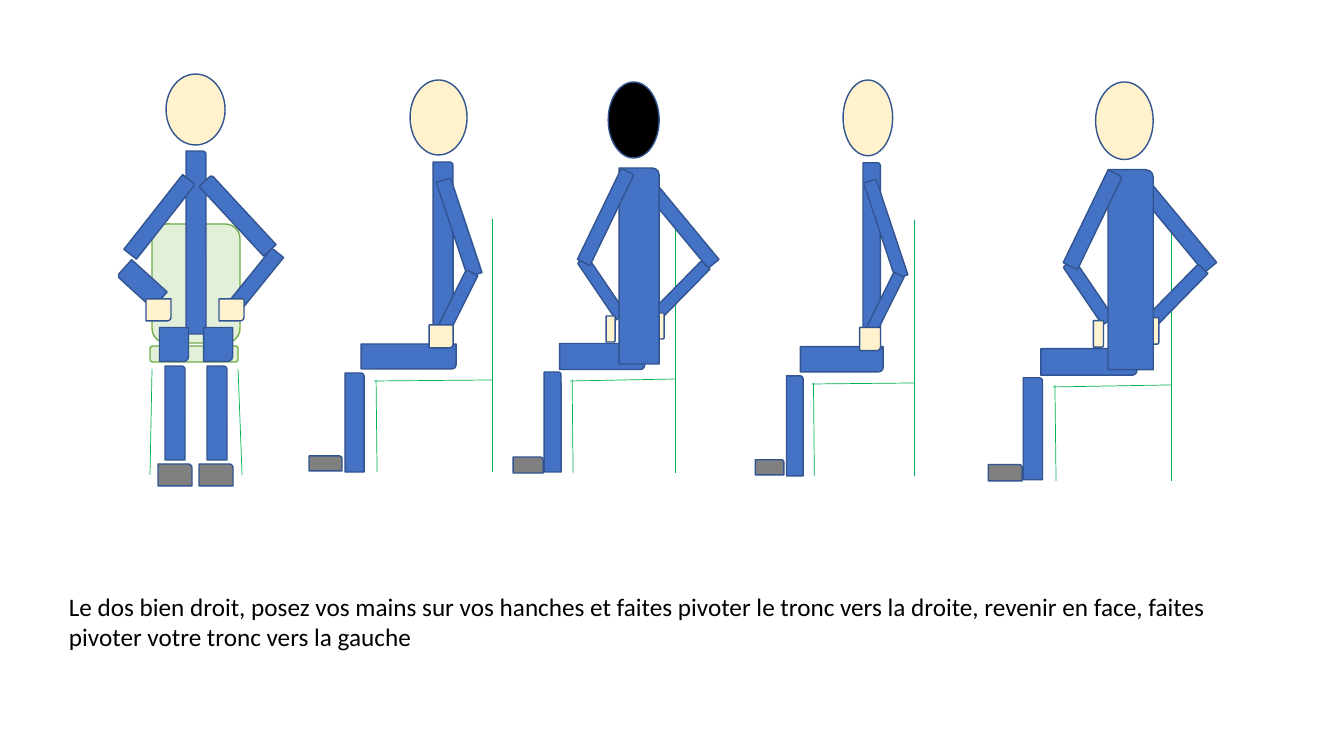
from lxml import etree
from pptx import Presentation
from pptx.dml.color import RGBColor
from pptx.enum.shapes import MSO_CONNECTOR, MSO_SHAPE
from pptx.enum.text import MSO_AUTO_SIZE
from pptx.oxml.ns import qn
from pptx.util import Inches, Pt

STRAIGHT = MSO_CONNECTOR.STRAIGHT
OVAL = MSO_SHAPE.OVAL
ROUND_ALL = MSO_SHAPE.ROUNDED_RECTANGLE
ROUND_ONE = MSO_SHAPE.ROUND_1_RECTANGLE
FIT_SHAPE = MSO_AUTO_SIZE.SHAPE_TO_FIT_TEXT

INSTRUCTION = ("Le dos bien droit, posez vos mains sur vos hanches et faites pivoter "
               "le tronc vers la droite, revenir en face, faites pivoter votre tronc "
               "vers la gauche")
INSTRUCTION_BOX = (59, 586, 1183, 72)

# Body parts: kind, left, top, width, height, rotation in degrees.
# Chair lines ("edge"): kind, x1, y1, x2, y2.  Listed from back to front.
FRONT = [
    ("chair", 150, 346, 88, 16, 0),
    ("chair", 152, 224, 88, 119, 0),
    ("head", 166, 74, 59, 71, 0),
    ("torso", 186, 151, 20, 183, 0),
    ("arm", 112, 209, 95, 16, 308.2),
    ("forearm", 118, 273, 48, 22, 222.3),
    ("shin", 165, 366, 20, 94, 0),
    ("thigh", 157, 330, 34, 29, 90),
    ("shoe", 158, 464, 34, 22, 0),
    ("thigh", 201, 330, 34, 29, 90),
    ("shin", 207, 366, 20, 94, 0),
    ("arm", 190, 207, 95, 17, 227.2),
    ("forearm", 224, 271, 66, 15, 309),
    ("hand", 146, 299, 25, 22, 0),
    ("hand", 219, 299, 25, 22, 0),
    ("shoe", 199, 464, 34, 22, 0),
    ("edge", 152, 369, 150, 475),
    ("edge", 238, 369, 242, 475),
]
PROFILE = [
    ("head", 101, 0, 57, 75, 0),
    ("torso", 124, 82, 20, 192, 0),
    ("arm", 100, 140, 100, 15, 251.6),
    ("forearm", 113, 217, 69, 13, 296.5),
    ("shin", 36, 293, 19, 99, 0),
    ("thigh", 87, 229, 25, 95, 90),
    ("shoe", 0, 376, 33, 15, 0),
    ("hand", 120, 245, 24, 23, 0),
    ("edge", 183, 139, 183, 392),
    ("edge", 183, 300, 65, 301),
    ("edge", 67, 300, 68, 392),
]
TWISTED = [
    ("head", 95, 0, 51, 76, 0),
    ("forearm", 54, 200, 69, 12, 235.8),
    ("shin", 31, 290, 17, 100, 0),
    ("thigh", 76, 232, 26, 85, 90),
    ("shoe", 0, 375, 30, 16, 0),
    ("hand", 93, 234, 9, 26, 0),
    ("edge", 162, 133, 162, 391),
    ("edge", 162, 297, 57, 299),
    ("edge", 59, 297, 60, 391),
    ("arm", 103, 129, 119, 14, 230.4),
    ("forearm", 133, 202, 70, 12, 314.4),
    ("hand", 142, 231, 9, 26, 0),
    ("torso", 106, 86, 40, 196, 0),
    ("arm", 42, 128, 101, 14, 295.8),
]
# pose, left, top, horizontal scale, vertical scale, head colour
FIGURES = [
    (FRONT, 0, 0, 1, 1, "skin"),
    (PROFILE, 309, 80, 1, 1, "skin"),
    (TWISTED, 513, 82, 1, 1, "ink"),
    (PROFILE, 755, 80, 0.87, 1.01, "skin"),
    (TWISTED, 988, 82, 1.13, 1.02, "skin"),
]

THEME = {
    "skin": "FFF2CC", "ink": "000000", "body": "4472C4", "outline": "325491",
    "shoe": "808080", "chair": "E2F0D9", "chair_line": "70AD47", "edge": "00B050",
    "font": "Calibri", "size": 18, "outline_pt": 1, "edge_pt": 0.5,
}
FILLS = {"hand": "skin", "shoe": "shoe", "chair": "chair"}
PRESETS = {"head": OVAL, "chair": ROUND_ALL}
FLIPPED = {"arm", "hand"}


def px(n):
    return round(n * 914400 / 100.8)


def color(name):
    return RGBColor.from_string(THEME[name])


def add_part(group, kind, box, rotation, fill):
    shape = group.shapes.add_shape(PRESETS.get(kind, ROUND_ONE), *map(px, box))
    shape.shadow.inherit = False
    shape.rotation = rotation
    shape.fill.solid()
    shape.fill.fore_color.rgb = color(fill)
    shape.line.color.rgb = color("chair_line" if kind == "chair" else "outline")
    shape.line.width = Pt(THEME["outline_pt"])
    if kind in FLIPPED:
        shape.element.spPr.find(qn("a:xfrm")).set("flipV", "1")


def add_edge(group, ends):
    line = group.shapes.add_connector(STRAIGHT, *map(px, ends))
    line.line.color.rgb = color("edge")
    line.line.width = Pt(THEME["edge_pt"])
    etree.SubElement(line.element.spPr, qn("a:effectLst"))


def scaled_box(x, y, w, h, rotation, sx, sy):
    """Scale about the centre; parts lying on their side swap the two factors."""
    cx, cy = (x + w / 2) * sx, (y + h / 2) * sy
    sideways = 45 <= rotation % 180 < 135
    w, h = (w * sy, h * sx) if sideways else (w * sx, h * sy)
    return cx - w / 2, cy - h / 2, w, h


def add_figure(s, pose, left, top, sx, sy, head):
    group = s.shapes.add_group_shape()
    for kind, *numbers in pose:
        if kind == "edge":
            x1, y1, x2, y2 = numbers
            add_edge(group, (left + x1 * sx, top + y1 * sy,
                             left + x2 * sx, top + y2 * sy))
        else:
            x, y, w, h = scaled_box(*numbers, sx, sy)
            fill = head if kind == "head" else FILLS.get(kind, "body")
            add_part(group, kind, (left + x, top + y, w, h), numbers[-1], fill)


def add_instruction(s):
    tf = s.shapes.add_textbox(*map(px, INSTRUCTION_BOX)).text_frame
    tf.word_wrap = True
    tf.auto_size = FIT_SHAPE
    r = tf.paragraphs[0].add_run()
    r.text = INSTRUCTION
    r.font.name = THEME["font"]
    r.font.size = Pt(THEME["size"])
    r.font.color.rgb = color("ink")


def main():
    prs = Presentation()
    prs.slide_width, prs.slide_height = Inches(13.33), Inches(7.5)
    s = prs.slides.add_slide(prs.slide_layouts[6])
    for figure in FIGURES:
        add_figure(s, *figure)
    add_instruction(s)
    prs.save("out.pptx")


if __name__ == "__main__":
    main()
